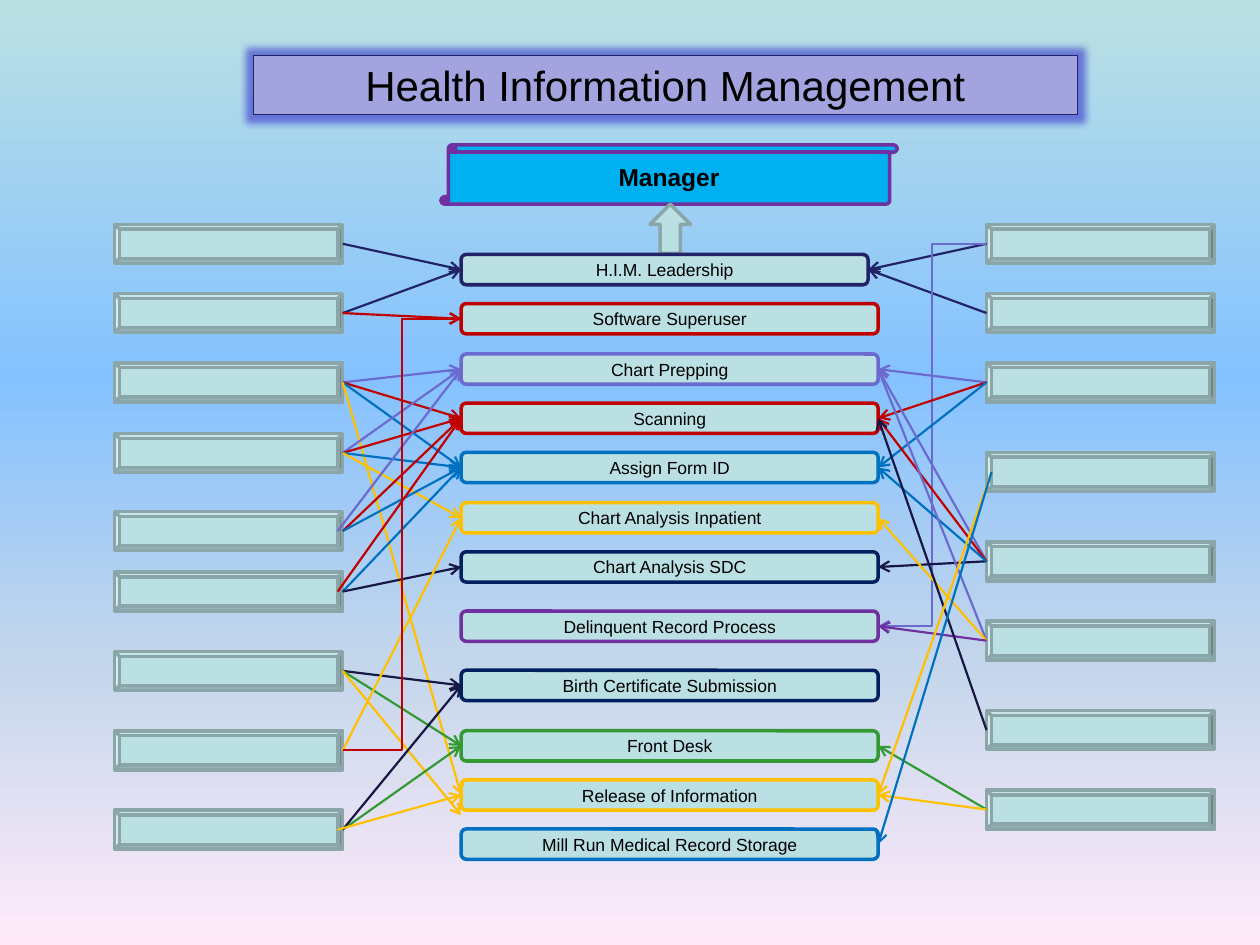
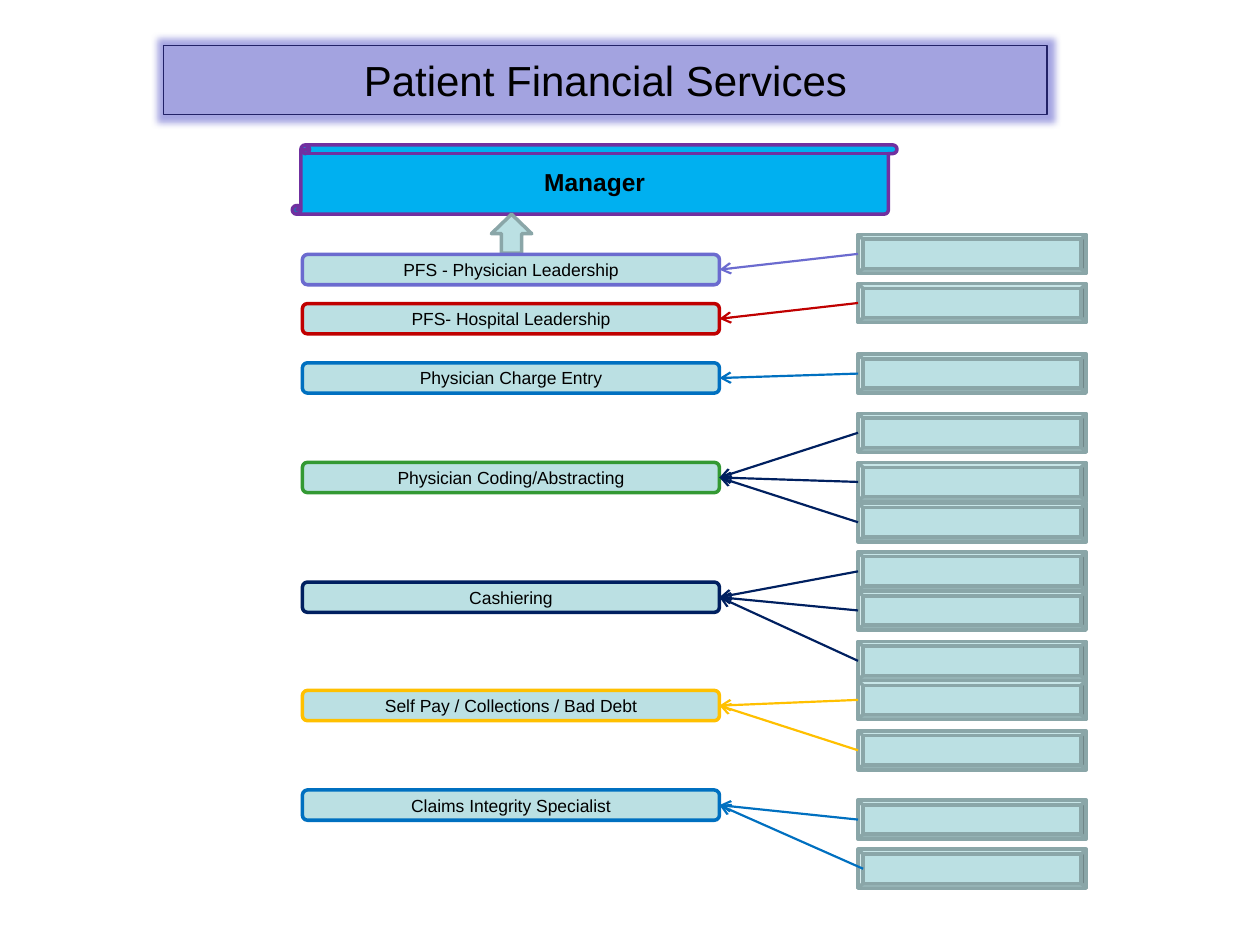
from dataclasses import dataclass

from lxml.etree import SubElement
from pptx import Presentation
from pptx.dml.color import RGBColor
from pptx.enum.shapes import MSO_CONNECTOR, MSO_SHAPE
from pptx.enum.text import MSO_ANCHOR, PP_ALIGN
from pptx.oxml.ns import qn
from pptx.util import Inches, Pt

FONT = "Arial"
BLACK, PALE, GREY = "000000", "BBE0E3", "8AA6A8"
LAVENDER, INDIGO, MIDNIGHT = "A3A3E0", "222267", "171745"
VIOLET, PURPLE, NAVY = "6B6BCF", "7030A0", "002060"
RED, BLUE, GOLD, GREEN, SKY = "C00000", "0070C0", "FFC000", "339933", "00B0F0"

TASK_W, TASK_H = 3.31, 0.24
STAFF_W, STAFF_H = 1.81, 0.31
BEVEL_EDGE = 0.04
TITLE_ONLY = 5


@dataclass
class Link:
    """Arrow from a staff box to a task; the task's colour unless one is given."""
    staff: int
    task: str
    color: str = ""
    inset: float = 0
    drop: float = 0
    kind: int = MSO_CONNECTOR.STRAIGHT


def rgb(hex_color):
    return RGBColor.from_string(hex_color)


def style(shape, fill, line, width):
    shape.shadow.inherit = False
    shape.fill.solid()
    shape.fill.fore_color.rgb = rgb(fill)
    shape.line.color.rgb = rgb(line)
    shape.line.width = Pt(width)


def write(shape, text, size, bold=False):
    frame = shape.text_frame
    frame.word_wrap = True
    frame.vertical_anchor = MSO_ANCHOR.MIDDLE
    paragraph = frame.paragraphs[0]
    paragraph.alignment = PP_ALIGN.CENTER
    run = paragraph.add_run()
    run.text = text
    run.font.name, run.font.size, run.font.bold = FONT, Pt(size), bold
    run.font.color.rgb = rgb(BLACK)


def add_box(slide, preset, box, line, fill=PALE):
    shape = slide.shapes.add_shape(preset, *map(Inches, box))
    style(shape, fill, line, 2)
    return shape


def add_arrow(slide, start, end, color, kind):
    connector = slide.shapes.add_connector(kind, *map(Inches, (*start, *end)))
    connector.line.color.rgb = rgb(color)
    connector.line.width = Pt(1.25)
    SubElement(connector.line._get_or_add_ln(), qn("a:tailEnd"), type="arrow")
    SubElement(connector._element.spPr, qn("a:effectLst"))


def add_title(slide, text, box, glow):
    title = slide.shapes.title
    title.left, title.top, title.width, title.height = map(Inches, box)
    style(title, LAVENDER, INDIGO, 0.75)
    write(title, text, 24)
    effects = title._element.spPr.find(qn("a:effectLst"))
    halo = SubElement(effects, qn("a:glow"), rad=str(Inches(0.11)))
    halo_color = SubElement(halo, qn("a:srgbClr"), val=glow)
    SubElement(halo_color, qn("a:alpha"), val="60000")


def add_manager(slide, box, arrow_left, arrow_height):
    """Manager scroll with the arrow that rises to its lower edge."""
    scroll = add_box(slide, MSO_SHAPE.VERTICAL_SCROLL, box, PURPLE, SKY)
    write(scroll, "Manager", 14, bold=True)
    arrow_box = (arrow_left, box[1] + box[3], 0.32, arrow_height)
    add_box(slide, MSO_SHAPE.UP_ARROW, arrow_box, GREY)


def add_tasks(slide, left, tasks):
    for name, (top, color, width) in tasks.items():
        task = add_box(slide, MSO_SHAPE.FLOWCHART_ALTERNATE_PROCESS,
                       (left, top, width, TASK_H), color)
        write(task, name, 10)


def add_staff(slide, left, tops):
    for top in tops:
        add_box(slide, MSO_SHAPE.BEVEL, (left, top, STAFF_W, STAFF_H), GREY)


def add_links(slide, staff_left, staff_tops, task_left, tasks, links):
    """Join the facing edges of a staff column and the task column."""
    staff_on_left = staff_left < task_left
    for link in links:
        top, color, width = tasks[link.task]
        if staff_on_left:
            start_x, end_x = staff_left + STAFF_W - link.inset, task_left
        else:
            start_x, end_x = staff_left + link.inset, task_left + width
        start = (start_x, staff_tops[link.staff] + STAFF_H / 2)
        end = (end_x, top + TASK_H / 2 + link.drop)
        add_arrow(slide, start, end, link.color or color, link.kind)


def set_gradient(slide, stops):
    fill = slide.background.fill
    fill.gradient()
    fill.gradient_angle = 270
    stop_list = slide._element.find(".//" + qn("a:gsLst"))
    for old_stop in list(stop_list):
        stop_list.remove(old_stop)
    for percent, color in stops:
        stop = SubElement(stop_list, qn("a:gs"), pos=str(percent * 1000))
        SubElement(stop, qn("a:srgbClr"), val=color)


def build_health_information(prs):
    slide = prs.slides.add_slide(prs.slide_layouts[TITLE_ONLY])
    set_gradient(slide, [(0, PALE), (40, "85C2FF"), (70, "C4D6EB"), (100, "FFEBFA")])
    add_title(slide, "Health Information Management", (2.01, 0.44, 6.54, 0.47), "3333CC")
    add_manager(slide, (3.5, 1.15, 3.62, 0.47), 5.16, 0.39)

    lead, super_user, prep, scan = ("H.I.M. Leadership", "Software Superuser",
                                    "Chart Prepping", "Scanning")
    form, inpatient, sdc = "Assign Form ID", "Chart Analysis Inpatient", "Chart Analysis SDC"
    delinquent, birth = "Delinquent Record Process", "Birth Certificate Submission"
    desk, release, storage = ("Front Desk", "Release of Information",
                              "Mill Run Medical Record Storage")
    tasks = {
        lead: (2.02, INDIGO, 3.23),
        super_user: (2.41, RED, TASK_W),
        prep: (2.81, VIOLET, TASK_W),
        scan: (3.2, RED, TASK_W),
        form: (3.59, BLUE, TASK_W),
        inpatient: (3.99, GOLD, TASK_W),
        sdc: (4.38, NAVY, TASK_W),
        delinquent: (4.85, PURPLE, TASK_W),
        birth: (5.32, NAVY, TASK_W),
        desk: (5.8, GREEN, TASK_W),
        release: (6.19, GOLD, TASK_W),
        storage: (6.58, BLUE, TASK_W),
    }
    task_left, left_staff, right_staff = 3.66, 0.91, 7.83
    left_tops = [1.78, 2.33, 2.88, 3.44, 4.06, 4.54, 5.17, 5.8, 6.43]
    right_tops = [1.78, 2.33, 2.88, 3.59, 4.3, 4.93, 5.64, 6.27]
    elbow = MSO_CONNECTOR.ELBOW
    left_links = [
        Link(0, lead), Link(1, lead), Link(1, super_user),
        Link(2, prep), Link(2, scan), Link(2, form), Link(2, release),
        Link(3, prep), Link(3, scan), Link(3, form), Link(3, inpatient),
        Link(4, prep, inset=BEVEL_EDGE), Link(4, scan), Link(4, form),
        Link(5, scan, inset=BEVEL_EDGE), Link(5, form), Link(5, sdc, MIDNIGHT),
        Link(6, birth, MIDNIGHT), Link(6, desk), Link(6, release, drop=0.16),
        Link(7, inpatient), Link(7, super_user, kind=elbow),
        Link(8, desk), Link(8, birth, MIDNIGHT), Link(8, release, inset=BEVEL_EDGE),
    ]
    right_links = [
        Link(0, lead), Link(1, lead), Link(0, delinquent, VIOLET, kind=elbow),
        Link(2, prep), Link(2, scan), Link(2, form),
        Link(4, sdc, MIDNIGHT), Link(4, prep), Link(4, scan), Link(4, form),
        Link(5, prep), Link(5, inpatient), Link(5, delinquent),
        Link(6, scan, MIDNIGHT), Link(7, desk), Link(7, release),
        Link(3, release, inset=BEVEL_EDGE), Link(3, storage, inset=BEVEL_EDGE),
    ]
    add_tasks(slide, task_left, tasks)
    for staff_left, tops, links in ((left_staff, left_tops, left_links),
                                    (right_staff, right_tops, right_links)):
        add_staff(slide, staff_left, tops)
        add_links(slide, staff_left, tops, task_left, tasks, links)


def build_patient_financial(prs):
    slide = prs.slides.add_slide(prs.slide_layouts[TITLE_ONLY])
    add_title(slide, "Patient Financial Services", (1.3, 0.36, 7.01, 0.55), VIOLET)
    add_manager(slide, (2.32, 1.15, 4.8, 0.55), 3.9, 0.31)

    physician, hospital, charge = ("PFS - Physician Leadership",
                                   "PFS- Hospital Leadership", "Physician Charge Entry")
    coding, cashier = "Physician Coding/Abstracting", "Cashiering"
    self_pay, claims = "Self Pay / Collections / Bad Debt", "Claims Integrity Specialist"
    tasks = {
        physician: (2.02, VIOLET, TASK_W),
        hospital: (2.41, RED, TASK_W),
        charge: (2.88, BLUE, TASK_W),
        coding: (3.67, GREEN, TASK_W),
        cashier: (4.62, NAVY, TASK_W),
        self_pay: (5.48, GOLD, TASK_W),
        claims: (6.27, BLUE, TASK_W),
    }
    task_left, staff_left = 2.4, 6.81
    staff_tops = [1.86, 2.25, 2.81, 3.28, 3.67, 3.99, 4.38,
                  4.69, 5.09, 5.4, 5.8, 6.35, 6.74]
    links = [Link(0, physician), Link(1, hospital), Link(2, charge)]
    links += [Link(staff, coding, NAVY) for staff in (3, 4, 5)]
    links += [Link(staff, cashier) for staff in (6, 7, 8)]
    links += [Link(staff, self_pay) for staff in (9, 10)]
    links += [Link(11, claims), Link(12, claims, inset=BEVEL_EDGE)]
    add_tasks(slide, task_left, tasks)
    add_staff(slide, staff_left, staff_tops)
    add_links(slide, staff_left, staff_tops, task_left, tasks, links)


def main():
    prs = Presentation()
    prs.slide_width, prs.slide_height = Inches(10), Inches(7.5)
    build_health_information(prs)
    build_patient_financial(prs)
    prs.save("out.pptx")


if __name__ == "__main__":
    main()
